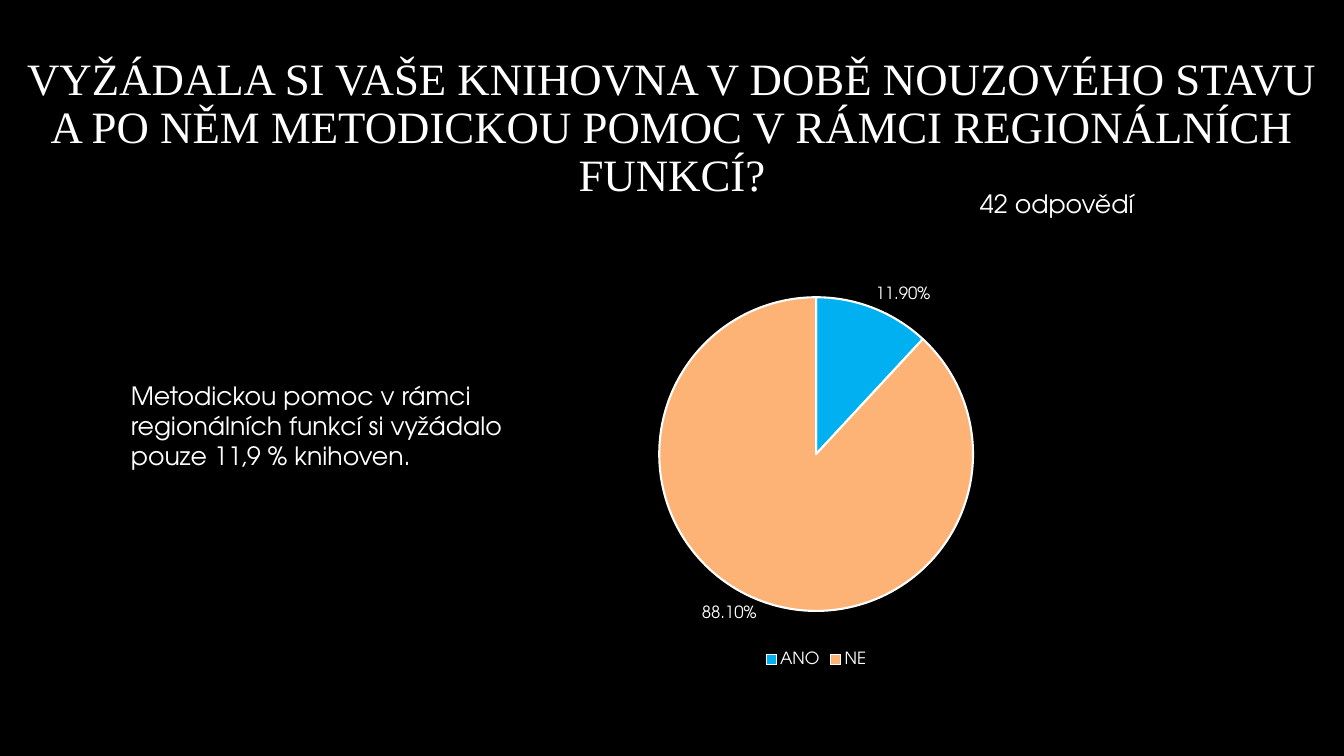
"""Build the survey slide on methodical help for libraries."""
from dataclasses import dataclass

import pptx
import pptx.chart.chart
import pptx.chart.data
import pptx.dml.color
import pptx.enum.chart
import pptx.enum.text
import pptx.oxml
import pptx.oxml.ns
import pptx.text.text
import pptx.util

WIDTH = pptx.util.Inches(13.33)
HEIGHT = pptx.util.Inches(7.5)
BLACK = pptx.dml.color.RGBColor(0x00, 0x00, 0x00)
WHITE = pptx.dml.color.RGBColor(0xFF, 0xFF, 0xFF)
BLUE = pptx.dml.color.RGBColor(0x00, 0xB0, 0xF0)
ORANGE = pptx.dml.color.RGBColor(0xFE, 0xB3, 0x76)
BODY_FONT = "TeX Gyre Adventor"
TITLE_FONT = "Times New Roman"


@dataclass(frozen=True)
class Area:
    """A rectangle in percent of the slide's width and height."""

    left: float
    top: float
    width: float
    height: float

    def lengths(self) -> tuple[int, int, int, int]:
        """Return left, top, width and height as slide lengths."""
        return (
            round(WIDTH * self.left / 100),
            round(HEIGHT * self.top / 100),
            round(WIDTH * self.width / 100),
            round(HEIGHT * self.height / 100),
        )


@dataclass(frozen=True)
class Note:
    """A text box and its place."""

    text: str
    area: Area


@dataclass(frozen=True)
class Answer:
    """One slice of the pie."""

    label: str
    share: float
    color: pptx.dml.color.RGBColor


TITLE = Note(
    "VYŽÁDALA SI VAŠE KNIHOVNA V DOBĚ NOUZOVÉHO STAVU A PO NĚM "
    "METODICKOU POMOC V RÁMCI REGIONÁLNÍCH FUNKCÍ?",
    Area(1.2, 10, 97.6, 14.13),
)
NOTES = (
    Note("42 odpovědí", Area(72.17, 24.27, 13.5, 9.47)),
    Note(
        "Metodickou pomoc v rámci regionálních funkcí si vyžádalo "
        "pouze 11,9 % knihoven.",
        Area(9, 49.6, 29.56, 13.47),
    ),
)
ANSWERS = (Answer("ANO", 0.119, BLUE), Answer("NE", 0.881, ORANGE))
CHART_AREA = Area(21.45, 35.6, 78.55, 53.2)
PIE_SHARES = {"x": 0.35, "y": 0.07, "w": 0.3, "h": 0.78}


def format_font(font: pptx.text.text.Font, *, size: float, name: str = BODY_FONT) -> None:
    """Set a white font of the given size and name."""
    font.size = pptx.util.Pt(size)
    font.name = name
    font.color.rgb = WHITE


def write_text(
    frame: pptx.text.text.TextFrame,
    text: str,
    *,
    size: float,
    name: str = BODY_FONT,
    align: pptx.enum.text.PP_ALIGN = pptx.enum.text.PP_ALIGN.LEFT,
    anchor: pptx.enum.text.MSO_ANCHOR = pptx.enum.text.MSO_ANCHOR.TOP,
    spacing: float = 1.0,
) -> None:
    """Fill a text frame with one formatted paragraph."""
    frame.word_wrap = True
    frame.auto_size = pptx.enum.text.MSO_AUTO_SIZE.NONE
    frame.vertical_anchor = anchor
    para = frame.paragraphs[0]
    para.alignment = align
    para.line_spacing = spacing
    span = para.add_run()
    span.text = text
    format_font(span.font, size=size, name=name)


def place_pie(chart: pptx.chart.chart.Chart) -> None:
    """Fix the pie's place inside the chart."""
    plot_area = chart._chartSpace.xpath("c:chart/c:plotArea")[0]
    for layout in plot_area.xpath("c:layout"):
        plot_area.remove(layout)
    shares = "".join(f'<c:{key} val="{value}"/>' for key, value in PIE_SHARES.items())
    plot_area.insert(0, pptx.oxml.parse_xml(
        f'<c:layout {pptx.oxml.ns.nsdecls("c")}><c:manualLayout>'
        '<c:layoutTarget val="inner"/><c:xMode val="edge"/><c:yMode val="edge"/>'
        f"{shares}</c:manualLayout></c:layout>"
    ))


def add_pie(page: pptx.slide.Slide) -> None:
    """Draw the pie of answers with its labels and legend."""
    data = pptx.chart.data.CategoryChartData(number_format="0.00%")
    data.categories = [answer.label for answer in ANSWERS]
    data.add_series("Series 1", [answer.share for answer in ANSWERS])
    kind = pptx.enum.chart.XL_CHART_TYPE.PIE
    chart = page.shapes.add_chart(kind, *CHART_AREA.lengths(), data).chart
    format_font(chart.font, size=10)
    chart.has_title = False
    chart.has_legend = True
    chart.legend.position = pptx.enum.chart.XL_LEGEND_POSITION.BOTTOM
    chart.legend.include_in_layout = False
    format_font(chart.legend.font, size=12)

    plot = chart.plots[0]
    plot.vary_by_categories = True
    for index, answer in enumerate(ANSWERS):
        slice_format = plot.series[0].points[index].format
        slice_format.fill.solid()
        slice_format.fill.fore_color.rgb = answer.color
        slice_format.line.color.rgb = WHITE
        slice_format.line.width = pptx.util.Pt(1.5)

    labels = plot.series[0].data_labels
    labels.show_value = True
    labels.show_percentage = False
    labels.number_format = "0.00%"
    labels.number_format_is_linked = False
    labels.position = pptx.enum.chart.XL_LABEL_POSITION.OUTSIDE_END
    format_font(labels.font, size=12)
    place_pie(chart)


def main() -> None:
    """Build and save the deck."""
    deck = pptx.Presentation()
    deck.slide_width, deck.slide_height = WIDTH, HEIGHT
    page = deck.slides.add_slide(deck.slide_layouts.get_by_name("Title Only"))
    page.background.fill.solid()
    page.background.fill.fore_color.rgb = BLACK

    title = page.shapes.title
    title.left, title.top, title.width, title.height = TITLE.area.lengths()
    write_text(
        title.text_frame,
        TITLE.text,
        size=32,
        name=TITLE_FONT,
        align=pptx.enum.text.PP_ALIGN.CENTER,
        anchor=pptx.enum.text.MSO_ANCHOR.MIDDLE,
        spacing=0.9,
    )
    add_pie(page)
    for note in NOTES:
        box = page.shapes.add_textbox(*note.area.lengths())
        write_text(box.text_frame, note.text, size=18)
    deck.save("out.pptx")


if __name__ == "__main__":
    main()
